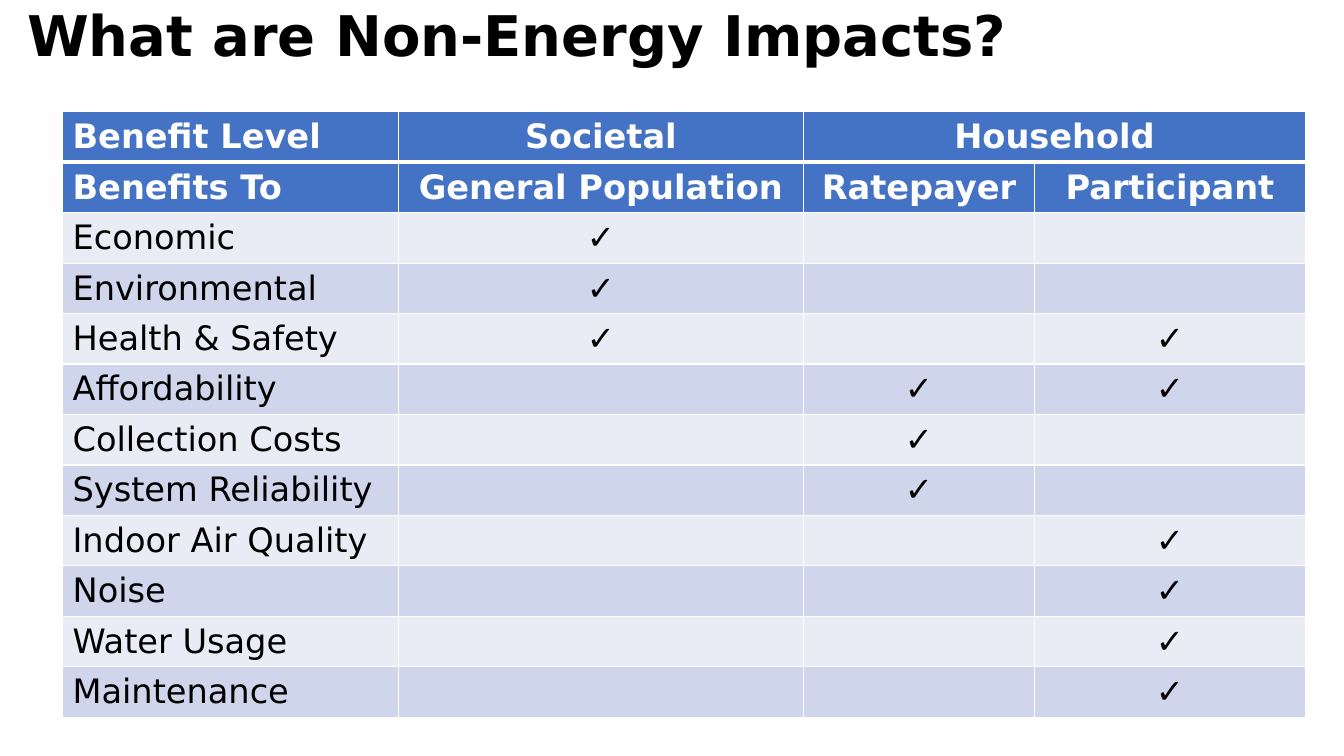
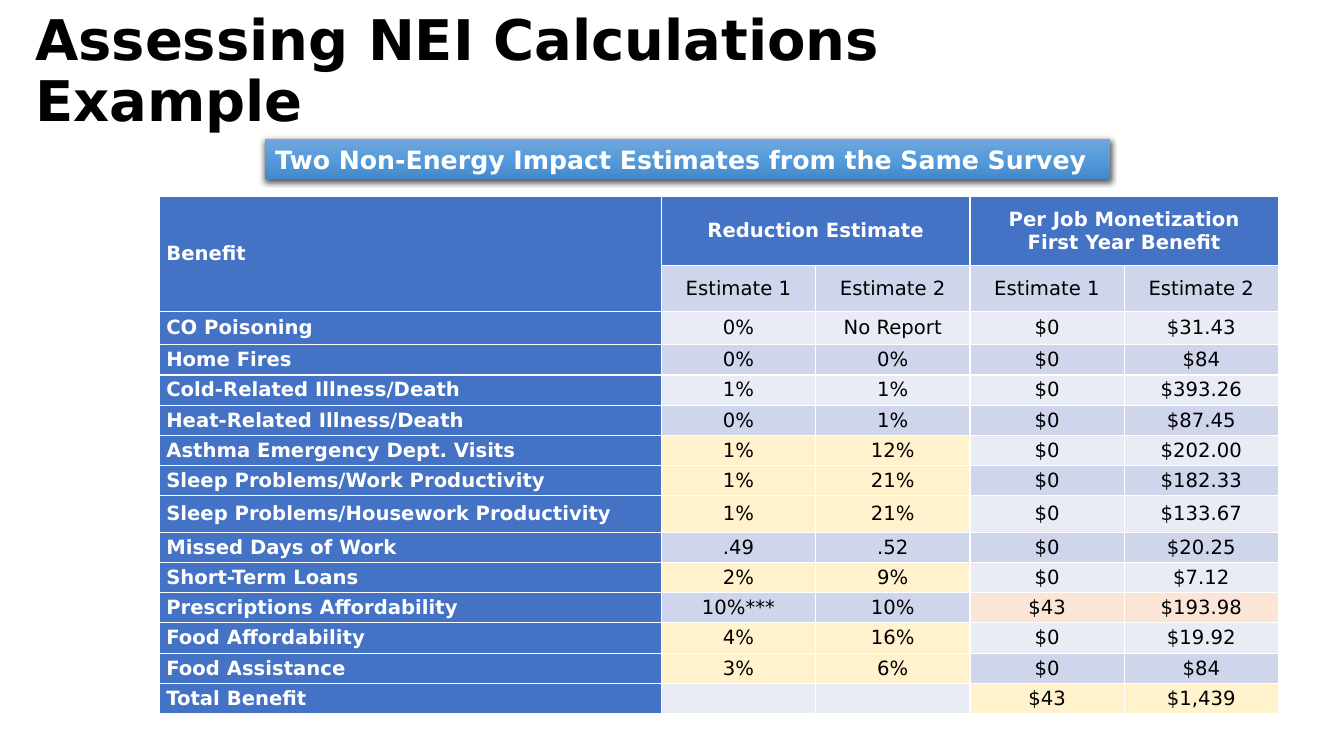
from copy import deepcopy

from lxml.etree import SubElement
from pptx import Presentation
from pptx.dml.color import RGBColor
from pptx.enum.shapes import MSO_SHAPE
from pptx.enum.text import MSO_ANCHOR, PP_ALIGN
from pptx.oxml.ns import qn
from pptx.util import Inches, Pt

FONT = "DejaVu Sans"
COLORS = {
    "black": "000000",
    "white": "FFFFFF",
    "head": "4472C4",
    "light": "E9EBF5",
    "dark": "CFD5EA",
    "yellow": "FFF2CC",
    "peach": "FBE5D6",
    "top": "71A6DB",
    "middle": "559BDB",
    "bottom": "448ACA",
}
TICK = "✓"

IMPACTS = [
    ("Benefit Level", "Societal", "Household", ""),
    ("Benefits To", "General Population", "Ratepayer", "Participant"),
    ("Economic", TICK, "", ""),
    ("Environmental", TICK, "", ""),
    ("Health & Safety", TICK, "", TICK),
    ("Affordability", "", TICK, TICK),
    ("Collection Costs", "", TICK, ""),
    ("System Reliability", "", TICK, ""),
    ("Indoor Air Quality", "", "", TICK),
    ("Noise", "", "", TICK),
    ("Water Usage", "", "", TICK),
    ("Maintenance", "", "", TICK),
]

VALUES = [
    ("Benefit", "Reduction Estimate", "", "Per Job Monetization\nFirst Year Benefit", ""),
    ("", "Estimate 1", "Estimate 2", "Estimate 1", "Estimate 2"),
    ("CO Poisoning", "0%", "No Report", "$0", "$31.43"),
    ("Home Fires", "0%", "0%", "$0", "$84"),
    ("Cold-Related Illness/Death", "1%", "1%", "$0", "$393.26"),
    ("Heat-Related Illness/Death", "0%", "1%", "$0", "$87.45"),
    ("Asthma Emergency Dept. Visits", "1%", "12%", "$0", "$202.00"),
    ("Sleep Problems/Work Productivity", "1%", "21%", "$0", "$182.33"),
    ("Sleep Problems/Housework Productivity", "1%", "21%", "$0", "$133.67"),
    ("Missed Days of Work", ".49", ".52", "$0", "$20.25"),
    ("Short-Term Loans", "2%", "9%", "$0", "$7.12"),
    ("Prescriptions Affordability", "10%***", "10%", "$43", "$193.98"),
    ("Food Affordability", "4%", "16%", "$0", "$19.92"),
    ("Food Assistance", "3%", "6%", "$0", "$84"),
    ("Total Benefit", "", "", "$43", "$1,439"),
]
RATES = (6, 7, 8, 10, 12, 13)
TINTS = {(row, col): "yellow" for row in RATES for col in (1, 2)}
TINTS.update({(11, col): "peach" for col in (3, 4)})
TINTS.update({(14, col): "yellow" for col in (3, 4)})


def rgb(name):
    return RGBColor.from_string(COLORS[name])


def add_run(para, text, size, color, bold):
    run = para.add_run()
    run.text = text
    font = run.font
    font.name, font.size, font.bold = FONT, Pt(size), bold
    font.color.rgb = rgb(color)


def add_title(slide, lines, left, top):
    box = slide.shapes.add_textbox(Inches(left), Inches(top), Inches(11.5), Inches(1.45))
    frame = box.text_frame
    frame.word_wrap = True
    frame.vertical_anchor = MSO_ANCHOR.MIDDLE
    para = frame.paragraphs[0]
    para.line_spacing = 0.9
    for index, line in enumerate(lines):
        if index:
            para.add_line_break()
        add_run(para, line, 40, "black", True)


def add_edges(cell, widths):
    props = cell._tc.get_or_add_tcPr()
    for index, side in enumerate("LRTB"):
        line = SubElement(props, qn(f"a:ln{side}"), w=str(Pt(widths.get(side, 1))))
        fill = SubElement(line, qn("a:solidFill"))
        SubElement(fill, qn("a:srgbClr"), val=COLORS["white"])
        props.insert(index, line)


def fill_cell(cell, text, size, fill, center):
    cell.fill.solid()
    cell.fill.fore_color.rgb = rgb(fill)
    cell.vertical_anchor = MSO_ANCHOR.MIDDLE
    head = fill == "head"
    for index, line in enumerate(text.split("\n") if text else []):
        frame = cell.text_frame
        para = frame.add_paragraph() if index else frame.paragraphs[0]
        para.alignment = PP_ALIGN.CENTER if center else PP_ALIGN.LEFT
        add_run(para, line, size, "white" if head else "black", head)


def add_grid(slide, data, left, top, widths, heights, size, is_head, tints, merges):
    frame = slide.shapes.add_table(
        len(data), len(widths), Inches(left), Inches(top),
        Inches(sum(widths)), Inches(sum(heights)))
    table = frame.table
    table.first_row = table.horz_banding = False
    for column, width in zip(table.columns, widths):
        column.width = Inches(width)
    for row, height in zip(table.rows, heights):
        row.height = Inches(height)
    for row, texts in enumerate(data):
        band = "dark" if row % 2 else "light"
        for col, text in enumerate(texts):
            fill = "head" if is_head(row, col) else tints.get((row, col), band)
            fill_cell(table.cell(row, col), text, size, fill, col > 0)
    for start, end in merges:
        table.cell(*start).merge(table.cell(*end))
    return table


def add_banner(slide, text):
    shape = slide.shapes.add_shape(
        MSO_SHAPE.RECTANGLE, Inches(2.63), Inches(1.38), Inches(8.38), Inches(0.4))
    shape.line.fill.background()
    shape.fill.gradient()
    shape.fill.gradient_angle = 270
    props = shape._element.spPr
    stops = props.find(".//" + qn("a:gsLst"))
    stops.insert(1, deepcopy(stops[0]))
    for stop, place, color in zip(shape.fill.gradient_stops, (0, 0.5, 1), ("top", "middle", "bottom")):
        stop.position = place
        stop.color.rgb = rgb(color)
    shape.shadow.inherit = False
    shadow = SubElement(
        props.find(qn("a:effectLst")), qn("a:outerShdw"), blurRad=str(Pt(4.5)),
        dist=str(Pt(1.5)), dir="5400000", algn="ctr", rotWithShape="0")
    tone = SubElement(shadow, qn("a:srgbClr"), val=COLORS["black"])
    SubElement(tone, qn("a:alpha"), val="63000")
    frame = shape.text_frame
    frame.word_wrap = True
    para = frame.paragraphs[0]
    para.alignment = PP_ALIGN.LEFT
    add_run(para, text, 18, "white", True)


def add_impacts(slide):
    add_title(slide, ["What are Non-Energy Impacts?"], 0.17, -0.34)
    table = add_grid(
        slide, IMPACTS, 0.62, 1.11, [3.33, 4.02, 2.29, 2.69], [0.44] * len(IMPACTS), 24,
        lambda row, col: row < 2, {}, [((0, 2), (0, 3))])
    rules = {0: {"B": 3}, 1: {"T": 3}}
    for index, row in enumerate(table.rows):
        for cell in row.cells:
            add_edges(cell, rules.get(index, {}))


def add_values(slide):
    add_title(slide, ["Assessing NEI Calculations", "Example"], 0.25, 0)
    heights = [0.68, 0.46, 0.33] + [0.3] * 12
    heights[8] = 0.36
    table = add_grid(
        slide, VALUES, 1.58, 1.95, [4.98] + [1.53] * 4, heights, 14,
        lambda row, col: row == 0 or col == 0, TINTS,
        [((0, 0), (1, 0)), ((0, 1), (0, 2)), ((0, 3), (0, 4))])
    for cell in table.iter_cells():
        cell.margin_left = cell.margin_right = Inches(0.07)
        cell.margin_top = cell.margin_bottom = 0
        add_edges(cell, {})
    add_banner(slide, "Two Non-Energy Impact Estimates from the Same Survey")


def main():
    deck = Presentation()
    deck.slide_width, deck.slide_height = Inches(13.33), Inches(7.5)
    for build in (add_impacts, add_values):
        build(deck.slides.add_slide(deck.slide_layouts[6]))
    deck.save("out.pptx")


if __name__ == "__main__":
    main()
